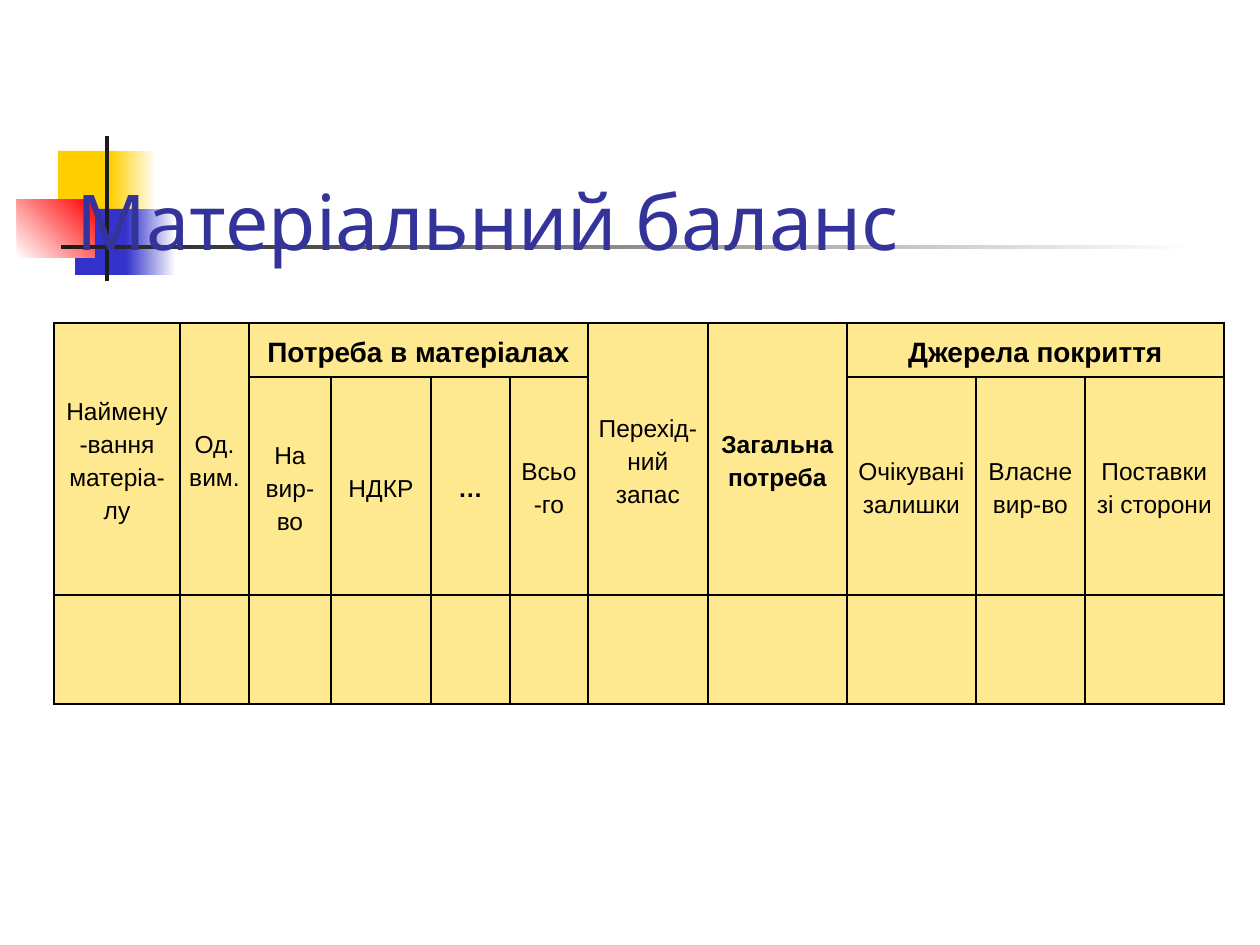
from lxml import etree
from pptx import Presentation
from pptx import util as u
from pptx.dml.color import RGBColor
from pptx.enum import shapes, text

PX = 914400 / 126
NS = "http://schemas.openxmlformats.org/drawingml/2006/main"


def px(n):
    return u.Emu(round(n * PX))


def hue(code):
    return RGBColor.from_string(code)


def write(frame, words, size=14, bold=False, font="Arial", color="000000",
          align=text.PP_ALIGN.CENTER, space=1.2):
    """Put one paragraph per line of words into the frame."""
    frame.word_wrap = True
    for i, line in enumerate(words.split("\n")):
        para = frame.paragraphs[0] if i == 0 else frame.add_paragraph()
        para.alignment = align
        para.line_spacing = space
        run = para.add_run()
        run.text = line
        run.font.name = font
        run.font.size = u.Pt(size)
        run.font.bold = bold
        run.font.color.rgb = hue(color)


deck = Presentation()
deck.slide_width, deck.slide_height = px(1260), px(945)
slide = deck.slides.add_slide(deck.slide_layouts[6])

# Corner blocks and rules: left, top, width, height, colours, angle
blocks = [
    (58, 151, 60, 66, ["FFCF01"], 0),
    (111, 151, 45, 66, ["FFCF01", "FFFFFF"], 0),
    (75, 209, 58, 66, ["3333CC"], 0),
    (126, 209, 50, 66, ["3333CC", "FFFFFF"], 0),
    (17, 199, 78, 59, ["FFFFFF", "FF0000"], 45),
    (105, 136, 4, 145, ["1C1C1C"], 0),
    (61, 245, 1134, 4, ["1C1C1C", "FFFFFF"], 0),
]
for x, y, w, h, tones, turn in blocks:
    box = slide.shapes.add_shape(shapes.MSO_SHAPE.RECTANGLE,
                                 px(x), px(y), px(w), px(h))
    box.shadow.inherit = False
    box.line.fill.background()
    if len(tones) == 1:
        box.fill.solid()
        box.fill.fore_color.rgb = hue(tones[0])
    else:
        box.fill.gradient()
        box.fill.gradient_angle = turn
        for stop, tone in zip(box.fill.gradient_stops, tones):
            stop.color.rgb = hue(tone)

# Title
title = slide.shapes.add_textbox(px(64), px(125), px(1134), px(147)).text_frame
title.vertical_anchor = text.MSO_ANCHOR.BOTTOM
write(title, "Матеріальний баланс", size=44, font="Karla", color="333399",
      align=text.PP_ALIGN.LEFT, space=1.0)

# Table grid
cols = [126, 69, 82, 100, 79, 78, 120, 139, 129, 109, 139]
rows = [54, 218, 109]
grid = slide.shapes.add_table(len(rows), len(cols), px(54), px(323),
                              px(sum(cols)), px(sum(rows))).table
grid.first_row = grid.horz_banding = False
for col, w in zip(grid.columns, cols):
    col.width = px(w)
for row, h in zip(grid.rows, rows):
    row.height = px(h)

# Cell borders, fill and margins
for cell in grid.iter_cells():
    props = cell._tc.get_or_add_tcPr()
    for side in ("lnL", "lnR", "lnT", "lnB"):
        line = etree.SubElement(props, f"{{{NS}}}{side}", w=str(u.Pt(1)))
        paint = etree.SubElement(line, f"{{{NS}}}solidFill")
        etree.SubElement(paint, f"{{{NS}}}srgbClr", val="000000")
    cell.fill.solid()
    cell.fill.fore_color.rgb = hue("FFE990")
    cell.vertical_anchor = text.MSO_ANCHOR.MIDDLE
    cell.margin_left = cell.margin_right = px(9)
    cell.margin_top = cell.margin_bottom = 0

# Headings: row, column, rows spanned, columns spanned, words, size, bold
heads = [
    (0, 0, 2, 1, "Наймену-вання матеріа-лу", 14, False),
    (0, 1, 2, 1, "Од. вим.", 14, False),
    (0, 2, 1, 4, "Потреба в матеріалах", 16, True),
    (0, 6, 2, 1, "Перехід-ний\nзапас", 14, False),
    (0, 7, 2, 1, "Загальна потреба", 14, True),
    (0, 8, 1, 3, "Джерела покриття", 16, True),
    (1, 2, 1, 1, "На\nвир-во", 14, False),
    (1, 3, 1, 1, "НДКР", 14, False),
    (1, 4, 1, 1, "…", 14, True),
    (1, 5, 1, 1, "Всьо-го", 14, False),
    (1, 8, 1, 1, "Очікувані\nзалишки", 14, False),
    (1, 9, 1, 1, "Власне вир-во", 14, False),
    (1, 10, 1, 1, "Поставки зі сторони", 14, False),
]
for r, c, down, over, words, size, bold in heads:
    cell = grid.cell(r, c)
    if down * over > 1:
        cell.merge(grid.cell(r + down - 1, c + over - 1))
    write(cell.text_frame, words, size=size, bold=bold)

deck.save("out.pptx")
